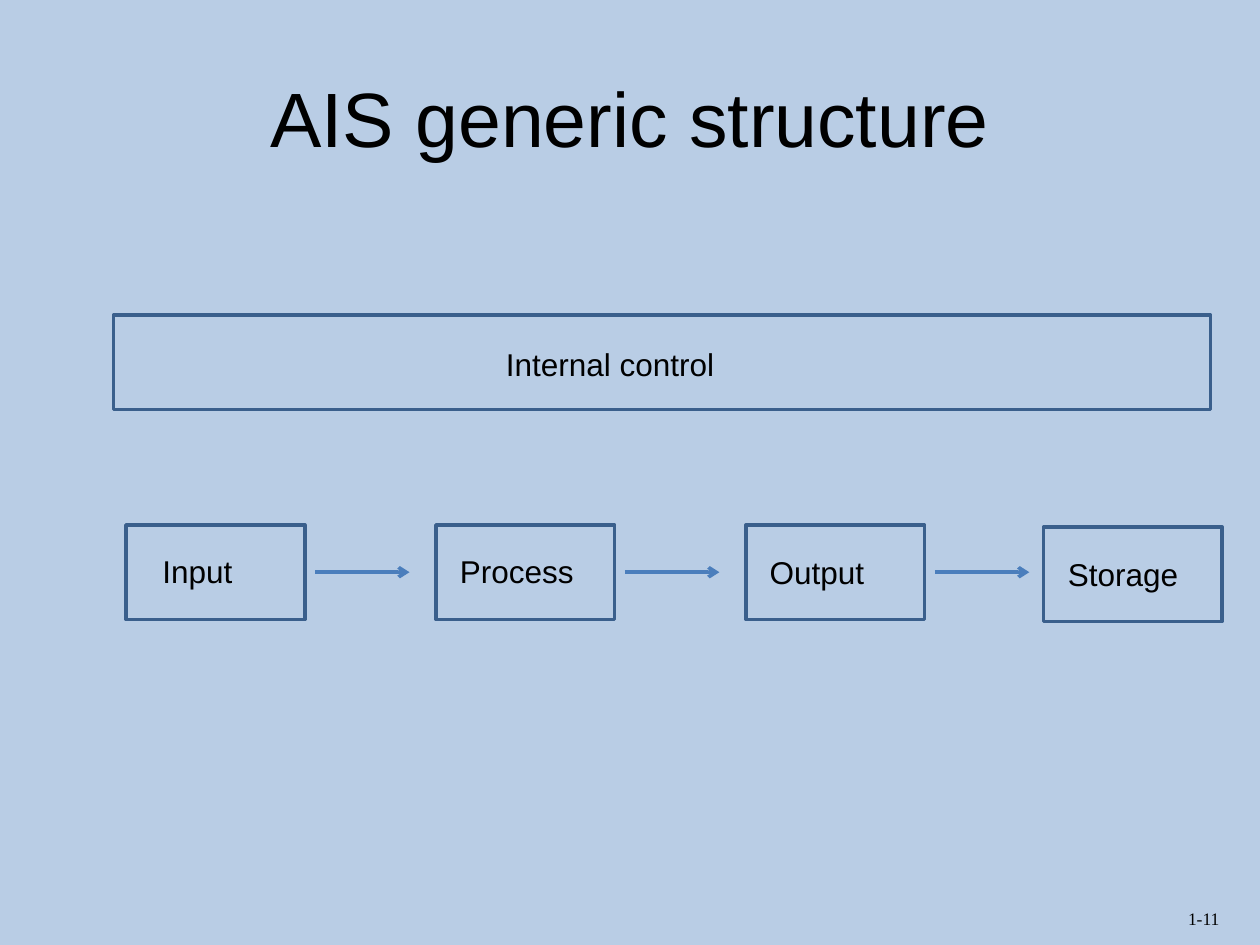
from dataclasses import dataclass

from lxml import etree
from pptx import Presentation
from pptx.dml.color import RGBColor
from pptx.enum.shapes import MSO_CONNECTOR, MSO_SHAPE
from pptx.enum.text import MSO_ANCHOR, PP_ALIGN
from pptx.oxml.ns import qn
from pptx.slide import Slide
from pptx.util import Pt

RECTANGLE = MSO_SHAPE.RECTANGLE
STRAIGHT = MSO_CONNECTOR.STRAIGHT
LEFT, CENTER = PP_ALIGN.LEFT, PP_ALIGN.CENTER
TOP, MIDDLE = MSO_ANCHOR.TOP, MSO_ANCHOR.MIDDLE

BACKGROUND = "B9CDE5"
BOX_LINE = "3A5F8C"
ARROW_LINE = "4B7EBC"
TEXT = "000000"
LINE_WIDTH = 2

STAGE_WIDTH, BOX_HEIGHT = 102.2, 54
ARROW_OFFSET, ARROW_LENGTH, ARROW_Y = 108, 54, 327


@dataclass(frozen=True)
class Area:
    left: float
    top: float
    width: float
    height: float

    def lengths(self) -> tuple[Pt, Pt, Pt, Pt]:
        return Pt(self.left), Pt(self.top), Pt(self.width), Pt(self.height)


@dataclass(frozen=True)
class Stage:
    name: str
    left: float
    top: float
    label: Area


STAGES = [
    Stage("Input", 72, 300, Area(85.7, 311.8, 75, 30)),
    Stage("Process", 249.1, 300, Area(255.8, 311.8, 88.6, 29)),
    Stage("Output", 426.2, 300, Area(432.7, 312.5, 88.6, 29)),
    Stage("Storage", 596.2, 301.2, Area(603.2, 313.4, 88.6, 29)),
]


def color(value: str) -> RGBColor:
    return RGBColor.from_string(value)


def add_text(slide: Slide, text: str, area: Area, size: float = 18,
             font_name: str = "Arial", alignment: PP_ALIGN = LEFT,
             anchor: MSO_ANCHOR = TOP) -> None:
    frame = slide.shapes.add_textbox(*area.lengths()).text_frame
    frame.word_wrap = True
    frame.vertical_anchor = anchor
    paragraph = frame.paragraphs[0]
    paragraph.text = text
    paragraph.alignment = alignment
    paragraph.font.name = font_name
    paragraph.font.size = Pt(size)
    paragraph.font.color.rgb = color(TEXT)


def add_box(slide: Slide, area: Area) -> None:
    shape = slide.shapes.add_shape(RECTANGLE, *area.lengths())
    shape.shadow.inherit = False
    shape.fill.background()
    shape.line.color.rgb = color(BOX_LINE)
    shape.line.width = Pt(LINE_WIDTH)


def add_arrow(slide: Slide, left: float) -> None:
    connector = slide.shapes.add_connector(
        STRAIGHT, Pt(left), Pt(ARROW_Y), Pt(left + ARROW_LENGTH), Pt(ARROW_Y))
    connector.line.color.rgb = color(ARROW_LINE)
    connector.line.width = Pt(LINE_WIDTH)
    properties = connector._element.spPr
    etree.SubElement(properties.find(qn("a:ln")), qn("a:tailEnd"), type="arrow")
    etree.SubElement(properties, qn("a:effectLst"))


def main() -> None:
    presentation = Presentation()
    presentation.slide_width, presentation.slide_height = Pt(720), Pt(540)
    slide = presentation.slides.add_slide(presentation.slide_layouts[6])
    slide.background.fill.solid()
    slide.background.fill.fore_color.rgb = color(BACKGROUND)

    add_text(slide, "1-11", Area(671.8, 515.5, 48.2, 19.4), 10, "Times New Roman")
    add_text(slide, "AIS generic structure", Area(36, 21.6, 648, 90), 44,
             alignment=CENTER, anchor=MIDDLE)
    add_box(slide, Area(64.8, 180, 627, BOX_HEIGHT))
    add_text(slide, "Internal control", Area(282, 193.7, 150, 30))

    for stage in STAGES:
        add_box(slide, Area(stage.left, stage.top, STAGE_WIDTH, BOX_HEIGHT))
        add_text(slide, stage.name, stage.label)
    for stage in STAGES[:-1]:
        add_arrow(slide, stage.left + ARROW_OFFSET)

    presentation.save("out.pptx")


if __name__ == "__main__":
    main()
